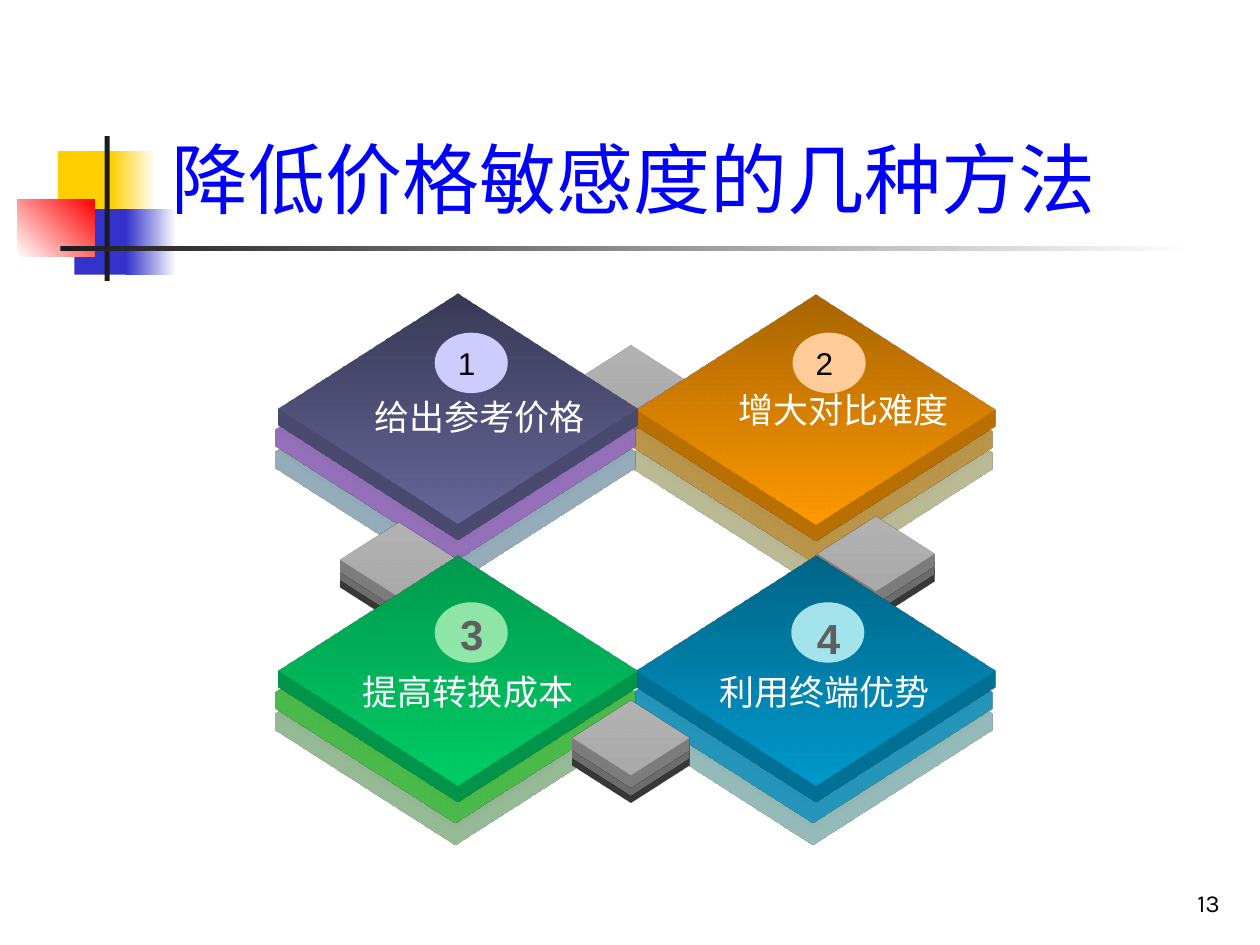
from dataclasses import dataclass

from lxml import etree
from pptx import Presentation
from pptx.dml.color import RGBColor
from pptx.enum.shapes import MSO_SHAPE
from pptx.enum.text import MSO_ANCHOR, PP_ALIGN
from pptx.oxml.ns import qn
from pptx.util import Inches, Pt

RECTANGLE, OVAL, DIAMOND = MSO_SHAPE.RECTANGLE, MSO_SHAPE.OVAL, MSO_SHAPE.DIAMOND
LEFT, CENTER, RIGHT = PP_ALIGN.LEFT, PP_ALIGN.CENTER, PP_ALIGN.RIGHT
TOP, MIDDLE, BOTTOM = MSO_ANCHOR.TOP, MSO_ANCHOR.MIDDLE, MSO_ANCHOR.BOTTOM

COLORS = {
    "white": "FFFFFF", "black": "000000", "title": "0000FF", "ink": "1C1C1C",
    "yellow": "FFCF01", "blue": "3333CC", "red": "FF0000", "number": "5F5F5F",
    "gray_light": "B2B2B2", "gray_top": "ABABAB", "gray_mid": "969696",
    "gray_dark": "4D4D4D",
}


@dataclass(frozen=True)
class TileStack:
    left: float
    top: float
    width: float
    height: float
    depth: float      # extrusion of each tile
    shift: float      # sideways offset of the lower tiles
    step: float       # drop from one tile to the next
    gradient: tuple[str, str]
    middle: str
    lowest: str


@dataclass(frozen=True)
class Badge:
    left: float
    top: float
    fill: str
    opacity: int = 100
    number: str = ""


@dataclass(frozen=True)
class Label:
    text: str
    left: float
    top: float
    width: float
    height: float
    size: int
    color: str
    font: str = "Arial"
    align: PP_ALIGN = CENTER
    anchor: MSO_ANCHOR = TOP
    bold: bool = False
    wrap: bool = False


def large_stack(left: float, top: float, gradient: tuple[str, str],
                middle: str, lowest: str) -> TileStack:
    return TileStack(left, top, 2.85, 1.82, 0.26, -0.02, 0.17,
                     gradient, middle, lowest)


def small_stack(left: float, top: float) -> TileStack:
    return TileStack(left, top, 0.93, 0.59, 0.2, 0, 0.06,
                     (COLORS["gray_light"], COLORS["gray_top"]),
                     COLORS["gray_mid"], COLORS["gray_dark"])


def paint(shape, *colors: str, angle: float = 0) -> None:
    """Fill with one colour, or with a gradient between two."""
    shape.shadow.inherit = False
    shape.line.fill.background()
    if len(colors) == 1:
        shape.fill.solid()
        shape.fill.fore_color.rgb = RGBColor.from_string(colors[0])
        return
    shape.fill.gradient()
    shape.fill.gradient_angle = angle
    for stop, color in zip(shape.fill.gradient_stops, colors):
        stop.color.rgb = RGBColor.from_string(color)


def add_block(page, kind, left: float, top: float, width: float, height: float,
              *colors: str, angle: float = 0):
    block = page.shapes.add_shape(kind, Inches(left), Inches(top),
                                  Inches(width), Inches(height))
    paint(block, *colors, angle=angle)
    return block


def extrude(shape, depth: float, color: str) -> None:
    """Give a shape solid sides that run straight down."""
    properties = shape._element.spPr
    scene = etree.SubElement(properties, qn("a:scene3d"))
    etree.SubElement(scene, qn("a:camera"), prst="legacyObliqueBottom")
    etree.SubElement(scene, qn("a:lightRig"), rig="legacyFlat3", dir="t")
    solid = etree.SubElement(properties, qn("a:sp3d"), extrusionH=str(Inches(depth)),
                             prstMaterial="legacyMatte")
    for bevel in ("a:bevelT", "a:bevelB"):
        etree.SubElement(solid, qn(bevel), w="13500", h="13500", prst="angle")
    side = etree.SubElement(solid, qn("a:extrusionClr"))
    etree.SubElement(side, qn("a:srgbClr"), val=color)


def write(shape, text: str, size: int, color: str, font: str = "Arial",
          align: PP_ALIGN = LEFT, anchor: MSO_ANCHOR = MIDDLE,
          bold: bool = False, wrap: bool = False) -> None:
    frame = shape.text_frame
    frame.word_wrap = wrap
    frame.vertical_anchor = anchor
    para = frame.paragraphs[0]
    para.text = text
    para.alignment = align
    para.font.name, para.font.size, para.font.bold = font, Pt(size), bold
    para.font.color.rgb = RGBColor.from_string(color)


def add_label(page, label: Label) -> None:
    box = page.shapes.add_textbox(Inches(label.left), Inches(label.top),
                                  Inches(label.width), Inches(label.height))
    write(box, label.text, label.size, label.color, label.font, label.align,
          label.anchor, label.bold, label.wrap)


def add_stack(page, stack: TileStack):
    """Draw three tiles from the lowest up and return the top one."""
    tile = None
    levels = ((2, (stack.lowest,)), (1, (stack.middle,)), (0, stack.gradient))
    for level, colors in levels:
        left = stack.left + (stack.shift if level else 0)
        tile = add_block(page, DIAMOND, left, stack.top + level * stack.step,
                         stack.width, stack.height, *colors, angle=270)
        extrude(tile, stack.depth, colors[-1])
    return tile


def add_badge(page, badge: Badge) -> None:
    oval = add_block(page, OVAL, badge.left, badge.top, 0.58, 0.48, badge.fill)
    if badge.opacity < 100:
        color = oval._element.spPr.find(qn("a:solidFill"))[0]
        etree.SubElement(color, qn("a:alpha")).set("val", str(badge.opacity * 1000))
    if badge.number:
        write(oval, badge.number, 18, COLORS["black"])


def caption(text: str, left: float, top: float, font: str = "Arial") -> Label:
    return Label(text, left, top, 1.87, 0.43, 20, COLORS["white"], font)


def number(text: str, left: float, top: float) -> Label:
    return Label(text, left, top, 0.39, 0.5, 24, COLORS["number"], bold=True)


def main() -> None:
    deck = Presentation()
    deck.slide_width, deck.slide_height = Inches(10), Inches(7.5)
    page = deck.slides.add_slide(deck.slide_layouts[6])
    white, ink = COLORS["white"], COLORS["ink"]
    yellow, blue = COLORS["yellow"], COLORS["blue"]

    # Title ornament
    add_block(page, RECTANGLE, 0.46, 1.2, 0.48, 0.52, yellow)
    add_block(page, RECTANGLE, 0.88, 1.2, 0.36, 0.52, yellow, white)
    add_block(page, RECTANGLE, 0.59, 1.66, 0.46, 0.52, blue)
    add_block(page, RECTANGLE, 1, 1.66, 0.4, 0.52, blue, white)
    add_block(page, RECTANGLE, 0.14, 1.58, 0.61, 0.46, white, COLORS["red"], angle=45)
    add_block(page, RECTANGLE, 0.83, 1.08, 0.04, 1.15, ink)
    add_block(page, RECTANGLE, 0.48, 1.95, 9, 0.04, ink, white)

    # Page number and title
    add_label(page, Label("13", 7.7, 6.83, 2.08, 0.5, 14, COLORS["black"],
                          "Karla", RIGHT, BOTTOM, wrap=True))
    add_label(page, Label("降低价格敏感度的几种方法", 1.26, 0.23, 8.52, 1.6, 44,
                          COLORS["title"], "Karla", LEFT, BOTTOM, wrap=True))

    # Upper row
    add_stack(page, small_stack(4.54, 2.74))
    orange = add_stack(page, large_stack(5.05, 2.34, ("A96500", "FF9900"),
                                         "FFCC66", "FFFFCC"))
    write(orange, "增大对比难度", 20, white)
    add_stack(page, large_stack(2.21, 2.33, ("393956", "666699"), "CC99FF", "CCECFF"))
    add_badge(page, Badge(3.45, 2.64, "CCCCFF", number="1"))
    add_badge(page, Badge(6.29, 2.64, "FFCC99", number="2"))

    # Lower row, right then left
    add_stack(page, small_stack(6.49, 4.1))
    add_stack(page, large_stack(5.05, 4.41, ("006587", "0099CC"), "33CCFF", "CCFFFF"))
    add_label(page, caption("利用终端优势", 5.61, 5.27))
    add_badge(page, Badge(6.28, 4.78, "CCFFFF", 80))
    add_label(page, number("4", 6.38, 4.81))
    add_stack(page, small_stack(2.7, 4.15))
    add_stack(page, large_stack(2.21, 4.41, ("009B4E", "00CC66"), "66FF66", "CCFFCC"))
    add_label(page, caption("提高转换成本", 2.78, 5.27))
    add_badge(page, Badge(3.45, 4.78, "CCFFCC", 70))
    add_label(page, number("3", 3.55, 4.78))

    # Front connector tile and first caption
    add_stack(page, small_stack(4.54, 5.56))
    add_label(page, caption("给出参考价格", 2.87, 3.09, "Karla"))
    deck.save("out.pptx")


if __name__ == "__main__":
    main()
